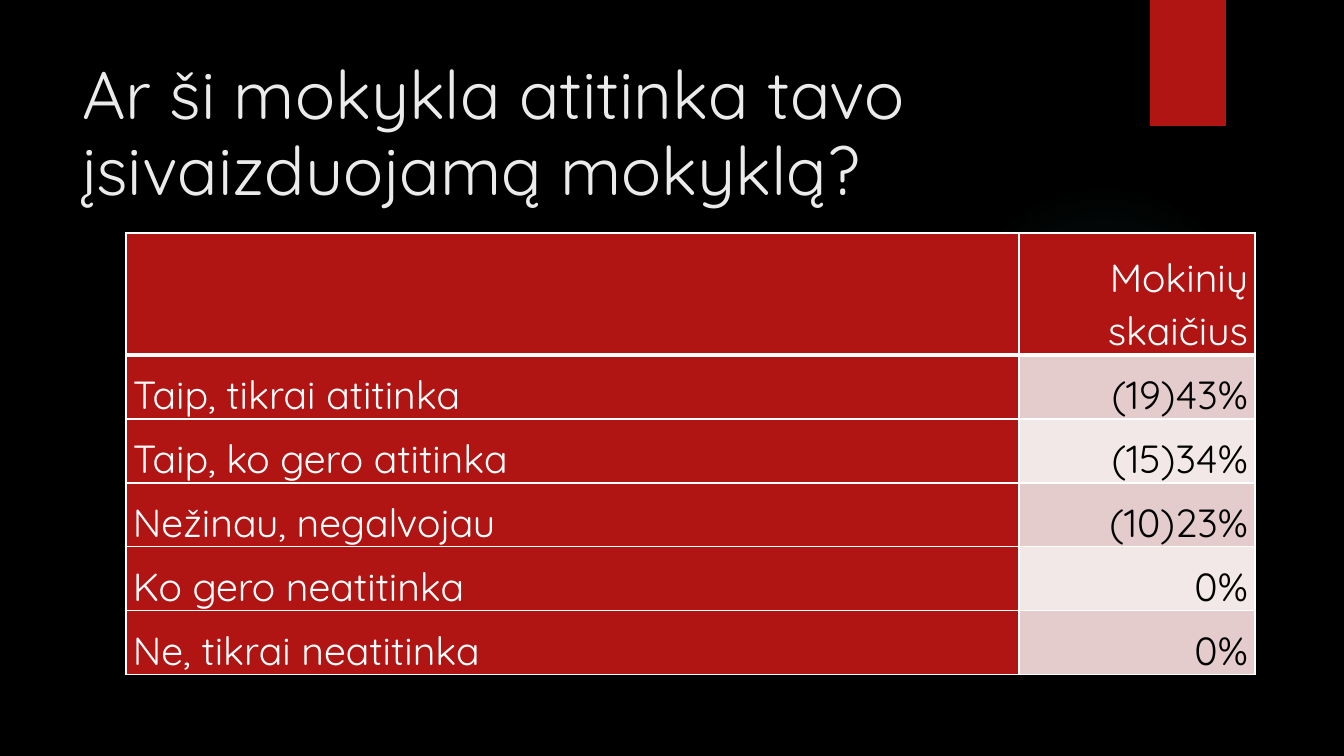
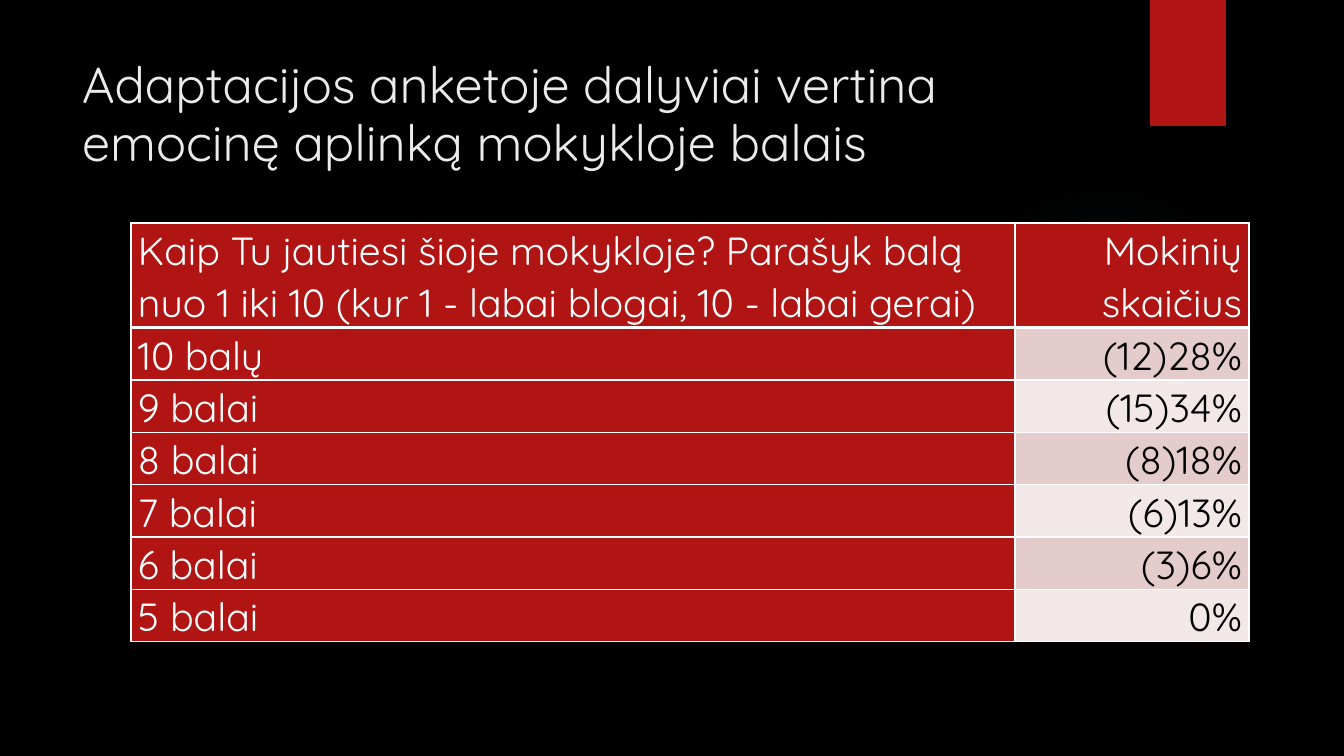
import pptx
import pptx.dml.color
import pptx.enum.shapes
import pptx.enum.text
import pptx.oxml
import pptx.oxml.ns
import pptx.util

RGBColor = pptx.dml.color.RGBColor
PP_ALIGN = pptx.enum.text.PP_ALIGN
ANCHOR = pptx.enum.text.MSO_ANCHOR
SHAPE = pptx.enum.shapes.MSO_SHAPE

BLACK = RGBColor(0x00, 0x00, 0x00)
WHITE = RGBColor(0xFF, 0xFF, 0xFF)
TITLE_GREY = RGBColor(0xEB, 0xEB, 0xEB)
RED = RGBColor(0xB0, 0x15, 0x13)
GLOW = RGBColor(0x50, 0xB9, 0xC1)
BANDS = (RGBColor(0xE4, 0xCC, 0xCC), RGBColor(0xF2, 0xE8, 0xE7))

FONT = "Quicksand"
EMU_PER_PX = 914400 / 100.8
TITLE_BOX = (72, 50, 1037, 154)
GLOW_BOX = (949, 184, 310, 310)
MARKER_BOX = (1150, 0, 76, 126)
GLOW_STOPS = ((0, 7), (36, 6), (69, 0))

QUESTIONS = [
    {
        "title": "Ar ši mokykla atitinka tavo įsivaizduojamą mokyklą?",
        "title_size": 48,
        "origin": (126, 233),
        "columns": (893, 236),
        "heights": (122, 64),
        "answers": [
            ("", "Mokinių skaičius"),
            ("Taip, tikrai atitinka", "(19)43%"),
            ("Taip, ko gero atitinka", "(15)34%"),
            ("Nežinau, negalvojau", "(10)23%"),
            ("Ko gero neatitinka", "0%"),
            ("Ne, tikrai neatitinka", "0%"),
        ],
    },
    {
        "title": "Adaptacijos anketoje dalyviai vertina emocinę aplinką mokykloje balais",
        "title_size": 36,
        "origin": (131, 223),
        "columns": (884, 234),
        "heights": (104, 52),
        "answers": [
            ("Kaip Tu jautiesi šioje mokykloje? Parašyk balą nuo 1 iki 10 "
             "(kur 1 - labai blogai, 10 - labai gerai)", "Mokinių skaičius"),
            ("10 balų", "(12)28%"),
            ("9 balai", "(15)34%"),
            ("8 balai", "(8)18%"),
            ("7 balai", "(6)13%"),
            ("6 balai", "(3)6%"),
            ("5 balai", "0%"),
        ],
    },
]


def px(length):
    """Turn a length in px into EMU."""
    return pptx.util.Emu(round(length * EMU_PER_PX))


def apply(target, **values):
    """Set each given attribute on the target."""
    for name, value in values.items():
        setattr(target, name, value)


def set_font(paragraph, size, color):
    """Give a paragraph the deck font in one size and colour."""
    apply(paragraph.font, name=FONT, size=pptx.util.Pt(size), bold=False)
    paragraph.font.color.rgb = color


def add_plain(slide, kind, box):
    """Add a red shape without line or shadow."""
    shape = slide.shapes.add_shape(kind, *map(px, box))
    shape.shadow.inherit = False
    shape.line.fill.background()
    shape.fill.solid()
    shape.fill.fore_color.rgb = RED
    return shape


def add_backdrop(slide):
    """Draw the soft glow and the red marker shared by all slides."""
    glow = add_plain(slide, SHAPE.OVAL, GLOW_BOX)
    stops = "".join(
        f'<a:gs pos="{place * 1000}"><a:srgbClr val="{GLOW}">'
        f'<a:alpha val="{alpha * 1000}"/></a:srgbClr></a:gs>'
        for place, alpha in GLOW_STOPS)
    gradient = pptx.oxml.parse_xml(
        f'<a:gradFill {pptx.oxml.ns.nsdecls("a")}><a:gsLst>{stops}</a:gsLst>'
        '<a:path path="circle"><a:fillToRect l="50000" t="50000" r="50000" b="50000"/>'
        '</a:path></a:gradFill>')
    properties = glow.element.spPr
    properties.replace(properties.find(pptx.oxml.ns.qn("a:solidFill")), gradient)
    add_plain(slide, SHAPE.RECTANGLE, MARKER_BOX)


def place_title(slide, text, size, box):
    """Move the title placeholder to its box and format its text."""
    title = slide.shapes.title
    left, top, width, height = map(px, box)
    apply(title, left=left, top=top, width=width, height=height)
    frame = title.text_frame
    frame.text = text
    apply(frame, word_wrap=True, vertical_anchor=ANCHOR.TOP, margin_top=px(8),
          auto_size=pptx.enum.text.MSO_AUTO_SIZE.NONE)
    paragraph = frame.paragraphs[0]
    apply(paragraph, alignment=PP_ALIGN.LEFT, line_spacing=0.95)
    set_font(paragraph, size, TITLE_GREY)


def add_borders(cell, top, bottom):
    """Outline a cell in white with the given top and bottom widths."""
    for side, width in (("L", 1), ("R", 1), ("T", top), ("B", bottom)):
        cell._tc.get_or_add_tcPr().append(pptx.oxml.parse_xml(
            f'<a:ln{side} {pptx.oxml.ns.nsdecls("a")} w="{pptx.util.Pt(width)}">'
            f'<a:solidFill><a:srgbClr val="{WHITE}"/></a:solidFill></a:ln{side}>'))


def fill_cell(cell, text, row, column):
    """Write one answer cell and style it by its row and column."""
    is_share = column == 1
    is_banded = is_share and row > 0
    add_borders(cell, 3 if row == 1 else 1, 3 if row == 0 else 1)
    cell.fill.solid()
    cell.fill.fore_color.rgb = BANDS[(row - 1) % 2] if is_banded else RED
    apply(cell, text=text, vertical_anchor=ANCHOR.BOTTOM, margin_left=px(7),
          margin_right=px(7), margin_top=0, margin_bottom=0)
    paragraph = cell.text_frame.paragraphs[0]
    apply(paragraph, alignment=PP_ALIGN.RIGHT if is_share else PP_ALIGN.LEFT,
          line_spacing=1.07, space_after=pptx.util.Pt(8))
    set_font(paragraph, 28, BLACK if is_banded else WHITE)


def add_answers(slide, origin, columns, heights, answers):
    """Add the table of answers with its taller header row."""
    header_height, row_height = heights
    height = header_height + row_height * (len(answers) - 1)
    table = slide.shapes.add_table(
        len(answers), len(columns), *map(px, (*origin, sum(columns), height))).table
    table.horz_banding = False
    for column, width in zip(table.columns, columns):
        column.width = px(width)
    for row, texts in enumerate(answers):
        table.rows[row].height = px(row_height if row else header_height)
        for column, text in enumerate(texts):
            fill_cell(table.cell(row, column), text, row, column)


def add_question_slide(deck, question):
    """Build one survey question slide."""
    slide = deck.slides.add_slide(deck.slide_layouts[5])
    add_backdrop(slide)
    place_title(slide, question["title"], question["title_size"], TITLE_BOX)
    add_answers(slide, question["origin"], question["columns"],
                question["heights"], question["answers"])


def main():
    """Build and save the survey deck."""
    deck = pptx.Presentation()
    apply(deck, slide_width=px(1344), slide_height=px(756))
    background = deck.slide_master.background.fill
    background.solid()
    background.fore_color.rgb = BLACK
    for question in QUESTIONS:
        add_question_slide(deck, question)
    deck.save("out.pptx")


if __name__ == "__main__":
    main()
